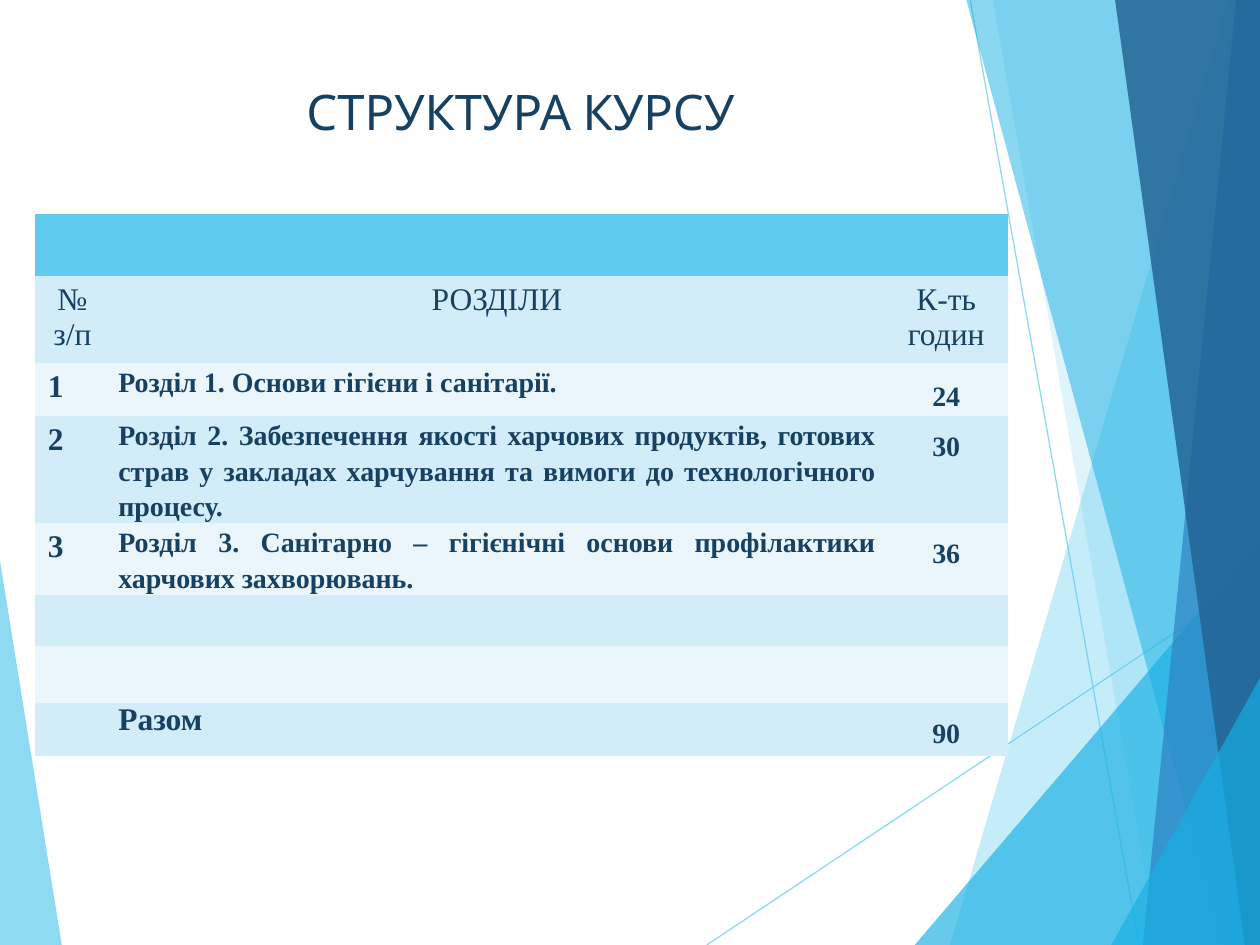
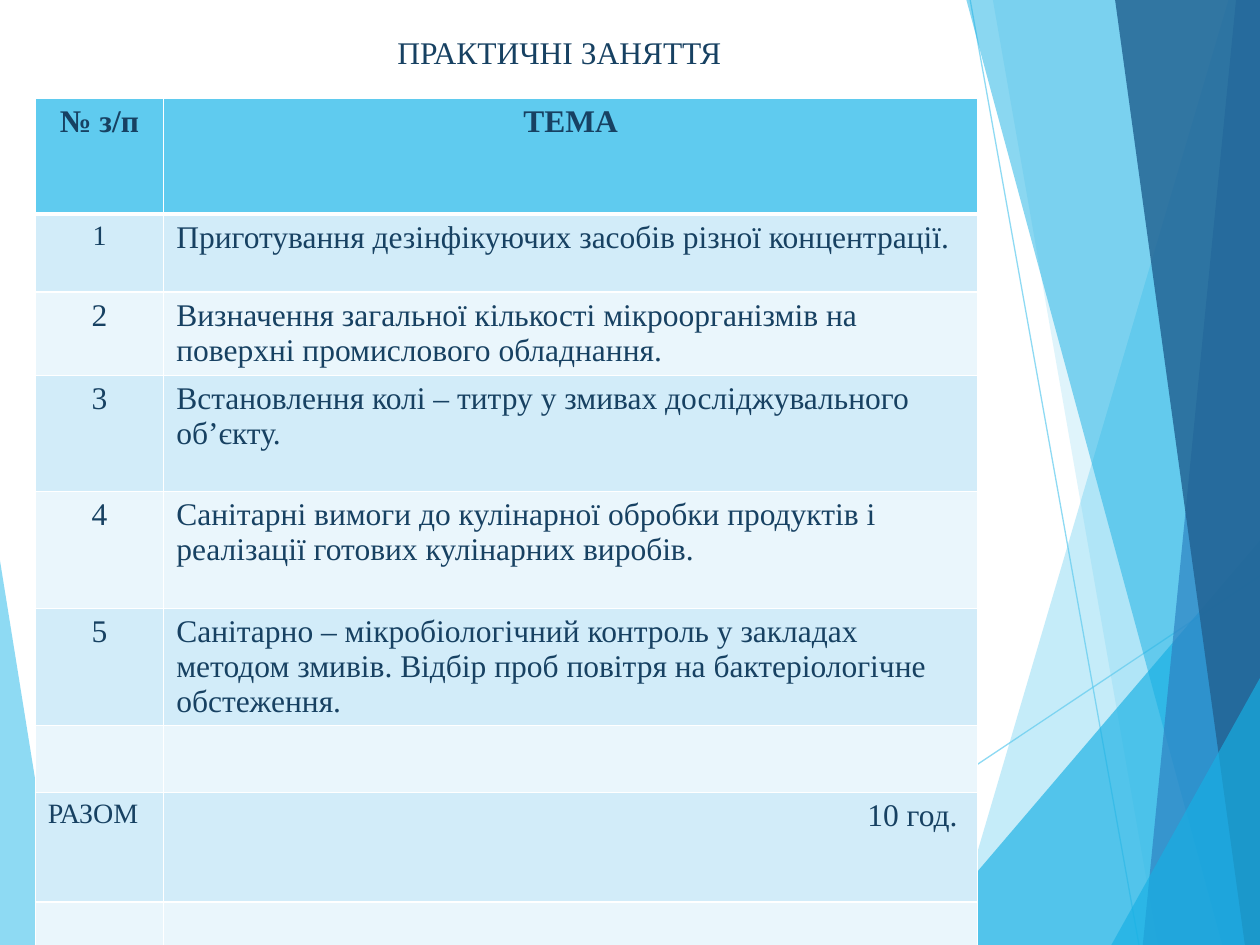
"""Build two course slides: the course structure and the practical classes."""
from lxml.etree import SubElement
from pptx import Presentation
from pptx.dml.color import RGBColor
from pptx.enum.shapes import MSO_CONNECTOR
from pptx.enum.text import MSO_ANCHOR, PP_ALIGN
from pptx.oxml.ns import qn
from pptx.util import Inches, Pt

SKY = RGBColor(0x5F, 0xCB, 0xEF)
AZURE = RGBColor(0x17, 0xB0, 0xE4)
BLUE = RGBColor(0x2E, 0x83, 0xC3)
DEEP = RGBColor(0x22, 0x62, 0x92)
INK = RGBColor(0x17, 0x41, 0x62)
DARK = RGBColor(0xD2, 0xEC, 0xF9)
PALE = RGBColor(0xEA, 0xF6, 0xFC)
SERIF = "Times New Roman"

LEFT = (SKY, 70, [(0, 4.45), (0.49, 7.5), (0, 7.5)])
RAYS = [((5.61, 7.5), (10, 4.57)), ((7.7, 0), (9.04, 7.5))]
SHARDS = [
    (SKY, 36, [(9.75, 0), (7.54, 7.5), (10, 7.5), (10, 0)]),
    (SKY, 20, [(7.88, 0), (9.19, 7.5), (10, 7.5), (10, 0)]),
    (AZURE, 66, [(7.26, 7.5), (10, 4.29), (10, 7.5)]),
    (AZURE, 50, [(7.67, 0), (9.7, 7.5), (10, 7.5), (10, 0)]),
    (BLUE, 70, [(9.81, 0), (9.07, 7.5), (10, 7.5), (10, 0)]),
    (DEEP, 82, [(8.85, 0), (9.88, 7.5), (10, 7.5), (10, 0)]),
    (AZURE, 66, [(8.82, 7.5), (10, 5.38), (10, 7.5)]),
]

MID = {"alignment": PP_ALIGN.CENTER}
END = {"alignment": PP_ALIGN.RIGHT}
BODY = {"alignment": PP_ALIGN.JUSTIFY, "line_spacing": 1.15, "space_after": Pt(10)}
HOUR = {"alignment": PP_ALIGN.CENTER, "line_spacing": 1.5}
TIGHT = {"margin_left": Inches(0.07), "margin_right": Inches(0.07),
         "margin_top": 0, "margin_bottom": 0}
BOLD = {"bold": True}
SMALL = {"size": Pt(16)}
LOUD = BOLD | SMALL

HEAD = ({}, MID, {})
MARK = ({}, {}, BOLD)
PART = (TIGHT, BODY, LOUD)
TIME = (TIGHT, HOUR, LOUD)
FIRST = (TIGHT | {"vertical_anchor": MSO_ANCHOR.MIDDLE},
         HOUR | {"space_after": Pt(10)}, LOUD)
SUM = (TIGHT, {}, BOLD)
TOP = ({}, MID, BOLD)
NUM = ({}, MID, {})
TOPIC = ({}, {}, {})

PAGES = [
    {
        "title": ("СТРУКТУРА КУРСУ", (1.63, 0.6, 5, 0.57), "Karla", 28),
        "at": (0.28, 1.7),
        "cols": [0.59, 6.15, 0.98],
        "highs": [0.49, 0.69, 0.42, 0.85, 0.57, 0.39, 0.45, 0.42],
        "edge": None,
        "merge": True,
        "rows": [
            [],
            [("№ з/п", HEAD), ("РОЗДІЛИ", HEAD), ("К-ть годин", HEAD)],
            [("1", MARK), ("Розділ 1. Основи гігієни і санітарії.", PART),
             ("24", FIRST)],
            [("2", MARK),
             ("Розділ 2. Забезпечення якості харчових продуктів, готових страв "
              "у закладах харчування та вимоги до технологічного процесу.", PART),
             ("30", TIME)],
            [("3", MARK),
             ("Розділ 3. Санітарно – гігієнічні основи профілактики харчових "
              "захворювань.", PART),
             ("36", TIME)],
            [],
            [],
            [("", MARK), ("Разом", SUM), ("90", TIME)],
        ],
    },
    {
        "title": ("ПРАКТИЧНІ ЗАНЯТТЯ", (1.93, 0.21, 5.02, 0.4), SERIF, 18),
        "at": (0.28, 0.78),
        "cols": [1.02, 6.46],
        "highs": [0.92, 0.62, 0.66, 0.92, 0.93, 0.93, 0.53, 0.87, 0.53],
        "edge": RGBColor(0xFF, 0xFF, 0xFF),
        "merge": False,
        "rows": [
            [("№ з/п", TOP), ("ТЕМА", TOP)],
            [("1", ({}, MID, SMALL)),
             ("Приготування дезінфікуючих засобів різної концентрації.", TOPIC)],
            [("2", NUM),
             ("Визначення загальної кількості мікроорганізмів на поверхні "
              "промислового обладнання.", TOPIC)],
            [("3", NUM),
             ("Встановлення колі – титру у змивах досліджувального об’єкту.",
              TOPIC)],
            [("4", NUM),
             ("Санітарні вимоги до кулінарної обробки продуктів і реалізації "
              "готових кулінарних виробів.", TOPIC)],
            [("5", NUM),
             ("Санітарно – мікробіологічний контроль у закладах методом змивів. "
              "Відбір проб повітря на бактеріологічне обстеження.", TOPIC)],
            [],
            [("РАЗОМ", ({}, {}, SMALL)),
             ("10 год.", ({"margin_right": Inches(0.16)}, END, {}))],
            [],
        ],
    },
]


def put(item, vals):
    for name, val in vals.items():
        setattr(item, name, val)


def fade(shape, part):
    for tint in shape._element.spPr.iter(qn("a:srgbClr")):
        SubElement(tint, qn("a:alpha"), val=str(part * 1000))


def shard(slide, tint, part, pts):
    spots = [(Inches(x), Inches(y)) for x, y in pts]
    pen = slide.shapes.build_freeform(*spots[0])
    pen.add_line_segments(spots[1:], close=True)
    shape = pen.convert_to_shape()
    shape.shadow.inherit = False
    shape.fill.solid()
    shape.fill.fore_color.rgb = tint
    shape.line.fill.background()
    fade(shape, part)


def ray(slide, start, stop):
    line = slide.shapes.add_connector(
        MSO_CONNECTOR.STRAIGHT, *map(Inches, start + stop))
    line.line.color.rgb = SKY
    line.line.width = Pt(0.75)
    fade(line, 70)
    SubElement(line._element.spPr, qn("a:effectLst"))


def decor(slide):
    shard(slide, *LEFT)
    for ends in RAYS:
        ray(slide, *ends)
    for item in SHARDS:
        shard(slide, *item)


def write(para, text, look, face=SERIF, size=18):
    put(para, look)
    run = para.add_run()
    run.text = text
    put(run.font, {"name": face, "size": Pt(size), "bold": False})
    run.font.color.rgb = INK
    return run


def title(slide, text, box, face, size):
    frame = slide.shapes.add_textbox(*map(Inches, box)).text_frame
    frame.word_wrap = True
    write(frame.paragraphs[0], text, MID, face, size)


def border(cell, tint, row):
    props = cell._tc.get_or_add_tcPr()
    for side in "LRTB":
        thick = (row == 0 and side == "B") or (row == 1 and side == "T")
        line = SubElement(props, qn(f"a:ln{side}"), w=str(Pt(3 if thick else 1)))
        if tint is None:
            SubElement(line, qn("a:noFill"))
        else:
            fill = SubElement(line, qn("a:solidFill"))
            SubElement(fill, qn("a:srgbClr"), val=str(tint))


def grid(slide, page):
    cols, highs = page["cols"], page["highs"]
    area = (*page["at"], sum(cols), sum(highs))
    table = slide.shapes.add_table(
        len(highs), len(cols), *map(Inches, area)).table
    put(table, {"first_row": False, "horz_banding": False})
    for col, wide in zip(table.columns, cols):
        col.width = Inches(wide)
    for r, (high, row) in enumerate(zip(highs, page["rows"])):
        table.rows[r].height = Inches(high)
        for c in range(len(cols)):
            cell = table.cell(r, c)
            border(cell, page["edge"], r)
            cell.fill.solid()
            cell.fill.fore_color.rgb = SKY if r == 0 else DARK if r % 2 else PALE
        for c, (text, (box, para, font)) in enumerate(row):
            if text:
                cell = table.cell(r, c)
                put(cell, box)
                run = write(cell.text_frame.paragraphs[0], text, para)
                put(run.font, font)
    if page["merge"]:
        table.cell(0, 0).merge(table.cell(0, len(cols) - 1))


def main():
    deck = Presentation()
    put(deck, {"slide_width": Inches(10), "slide_height": Inches(7.5)})
    for page in PAGES:
        slide = deck.slides.add_slide(deck.slide_layouts[6])
        decor(slide)
        grid(slide, page)
        title(slide, *page["title"])
    deck.save("out.pptx")


if __name__ == "__main__":
    main()
